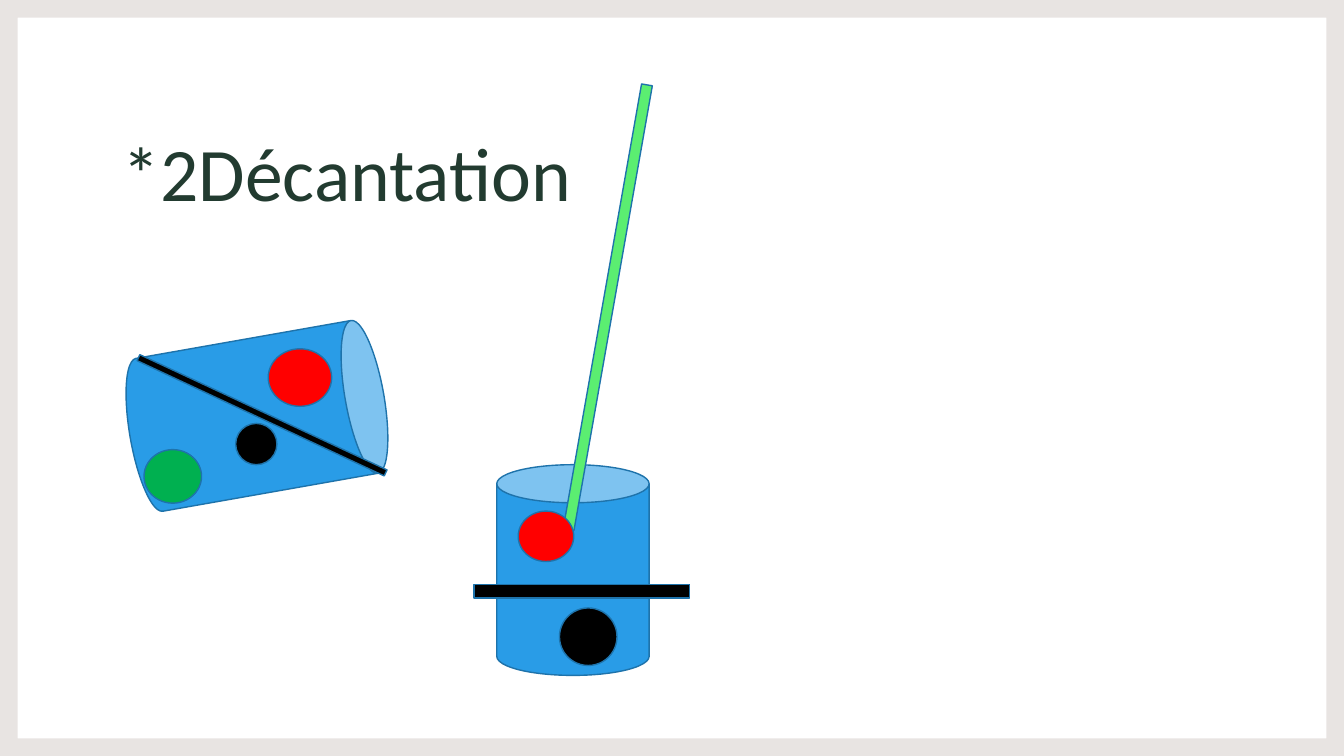
import pptx
import pptx.util
import pptx.dml.color
import pptx.enum.shapes
import pptx.enum.text

Cm = pptx.util.Cm
Pt = pptx.util.Pt
KIND = pptx.enum.shapes.MSO_SHAPE
TEXT = pptx.enum.text

BLUE = "299CE7"
EDGE = "1E73AB"
RED = "FF0000"
GREEN = "00B050"
LIME = "5BEE71"
BLACK = "000000"


def tint(hue):
    return pptx.dml.color.RGBColor.from_string(hue)


def apply(item, style):
    for key, value in style.items():
        setattr(item, key, value)


def draw(slide, kind, box, fill, turn=0, edge=EDGE):
    shape = slide.shapes.add_shape(kind, *map(Cm, box))
    shape.shadow.inherit = False
    shape.rotation = turn
    shape.fill.solid()
    shape.fill.fore_color.rgb = tint(fill)
    if edge:
        shape.line.color.rgb = tint(edge)
        shape.line.width = Pt(1)
    else:
        shape.line.fill.background()
    return shape


def group(slide, left, top, parts):
    for kind, x, y, wide, high, fill, turn in parts:
        draw(slide, kind, (left + x, top + y, wide, high), fill, turn)


def border(slide, box):
    frame = draw(slide, KIND.FRAME, box, "E8E4E2", edge=None)
    frame.adjustments[0] = 0.0233


def title(slide, box, words):
    head = slide.shapes.title
    apply(head, dict(zip(("left", "top", "width", "height"), map(Cm, box))))
    frame = head.text_frame
    apply(frame, {
        "text": words,
        "word_wrap": True,
        "auto_size": TEXT.MSO_AUTO_SIZE.NONE,
        "vertical_anchor": TEXT.MSO_ANCHOR.BOTTOM,
    })
    para = frame.paragraphs[0]
    apply(para, {"alignment": TEXT.PP_ALIGN.LEFT, "line_spacing": 1.1})
    apply(para.font, {"name": "Calibri", "size": Pt(54)})
    para.font.color.rgb = tint("223B30")


def tilted(slide, left, top):
    group(slide, left, top, [
        (KIND.CAN, 2.59, 0, 3.91, 6.48, BLUE, 80),
        (KIND.OVAL, 4.83, 1.55, 1.6, 1.45, RED, 0),
        (KIND.OVAL, 1.7, 4.09, 1.45, 1.35, GREEN, 0),
        (KIND.OVAL, 4.01, 3.43, 1.04, 1.04, BLACK, 0),
        (KIND.MATH_MINUS, 0, 2.87, 9.35, 0.71, BLACK, 25),
    ])


def upright(slide, left, top):
    group(slide, left, top, [
        (KIND.CAN, 4.95, 4.55, 3.84, 5.31, BLUE, 0),
        (KIND.MATH_MINUS, 0, 0, 15.49, 1.17, LIME, 100),
        (KIND.MATH_MINUS, 3.4, 7.01, 7.39, 1.45, BLACK, 0),
        (KIND.OVAL, 5.49, 5.72, 1.4, 1.27, RED, 0),
        (KIND.OVAL, 6.53, 8.16, 1.45, 1.45, BLACK, 0),
    ])


def main():
    deck = pptx.Presentation()
    apply(deck, {"slide_width": Cm(33.87), "slide_height": Cm(19.05)})
    slide = deck.slides.add_slide(deck.slide_layouts[5])
    border(slide, (0, 0, 33.87, 19.05))
    title(slide, (2.84, 2.01, 28.14, 3.58), "*2Décantation")
    tilted(slide, 1.93, 7.24)
    upright(slide, 7.57, 7.16)
    deck.save("out.pptx")


if __name__ == "__main__":
    main()
